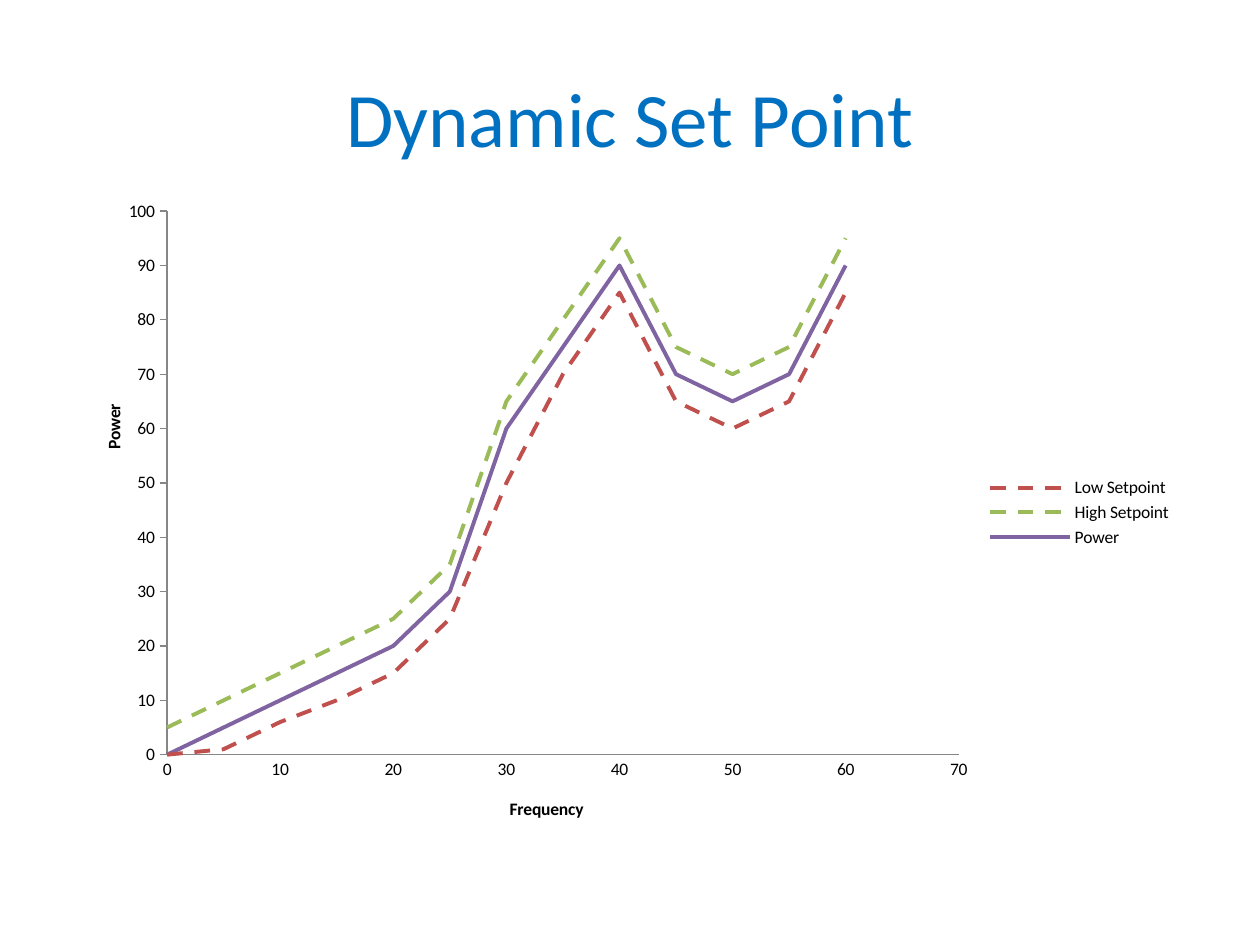
from lxml.etree import SubElement
from pptx import Presentation
from pptx.chart.data import XyChartData
from pptx.dml.color import RGBColor
from pptx.enum.chart import XL_CHART_TYPE, XL_LEGEND_POSITION, XL_TICK_MARK
from pptx.enum.dml import MSO_LINE
from pptx.enum.text import MSO_ANCHOR, PP_ALIGN
from pptx.oxml.ns import qn
from pptx.util import Pt

SCALE = 914400 // 126
FONT = "Calibri"
FREQS = range(0, 61, 5)
SERIES = [
    ("Low Setpoint", "C0504D", MSO_LINE.DASH,
     [0, 1, 6, 10, 15, 25, 50, 70, 85, 65, 60, 65, 85]),
    ("High Setpoint", "9BBB59", MSO_LINE.DASH,
     [5, 10, 15, 20, 25, 35, 65, 80, 95, 75, 70, 75, 95]),
    ("Power", "8064A2", MSO_LINE.SOLID,
     [0, 5, 10, 15, 20, 30, 60, 75, 90, 70, 65, 70, 90]),
]


def px(*nums):
    return [num * SCALE for num in nums]


def paint(part, tone):
    part.rgb = RGBColor.from_string(tone)


def style(font, size, tone, bold=False):
    font.name, font.size, font.bold = FONT, Pt(size), bold
    paint(font.color, tone)


def pin(node, **parts):
    """Fix the layout of a chart part, in fractions of the chart."""
    layout = node.find(qn("c:layout"))
    if layout is None:
        layout = node.makeelement(qn("c:layout"))
        prior = node.find(qn("c:tx"))
        node.insert(0 if prior is None else node.index(prior) + 1, layout)
    for child in list(layout):
        layout.remove(child)
    manual = SubElement(layout, qn("c:manualLayout"))
    for tag, val in parts.items():
        SubElement(manual, qn("c:" + tag)).set("val", str(val))


def add_title(slide, box, text):
    frame = slide.shapes.add_textbox(*px(*box)).text_frame
    frame.word_wrap = True
    frame.vertical_anchor = MSO_ANCHOR.MIDDLE
    para = frame.paragraphs[0]
    para.text = text
    para.alignment = PP_ALIGN.CENTER
    style(para.font, 44, "0070C0")


def set_axis(axis, name, top, tick, spot):
    axis.minimum_scale, axis.maximum_scale, axis.major_unit = 0, top, 10
    axis.has_major_gridlines = False
    axis.major_tick_mark = tick
    axis.minor_tick_mark = XL_TICK_MARK.NONE
    paint(axis.format.line.color, "868686")
    axis.format.line.width = Pt(0.75)
    title = axis.axis_title
    para = title.text_frame.paragraphs[0]
    para.text = name
    style(para.font, 10, "000000", True)
    left, upper = spot
    pin(title._element, xMode="edge", yMode="edge", x=left, y=upper)


def add_plot(slide, box):
    data = XyChartData(number_format="General")
    for name, _, _, powers in SERIES:
        line = data.add_series(name)
        for freq, power in zip(FREQS, powers):
            line.add_data_point(freq, power)
    chart = slide.shapes.add_chart(
        XL_CHART_TYPE.XY_SCATTER_SMOOTH_NO_MARKERS, *px(*box), data).chart
    chart.has_title = False
    style(chart.font, 10, "000000")
    chart.has_legend = True
    chart.legend.position = XL_LEGEND_POSITION.RIGHT
    chart.legend.include_in_layout = False
    plot = chart.plots[0]
    plot.vary_by_categories = False
    for line, (_, tone, dash, _) in zip(plot.series, SERIES):
        line.smooth = True
        pen = line.format.line
        paint(pen.color, tone)
        pen.width = Pt(2.25)
        pen.dash_style = dash
    set_axis(chart.category_axis, "Frequency", 70, XL_TICK_MARK.NONE, (0.4, 0.93))
    set_axis(chart.value_axis, "Power", 100, XL_TICK_MARK.OUTSIDE, (0.04, 0.33))
    pin(chart._chartSpace.chart.plotArea, layoutTarget="inner",
        xMode="edge", yMode="edge", x=0.1, y=0.04, w=0.7, h=0.83)


def main():
    deck = Presentation()
    deck.slide_width, deck.slide_height = px(1260, 945)
    slide = deck.slides.add_slide(deck.slide_layouts[6])
    add_title(slide, (63, 38, 1134, 157), "Dynamic Set Point")
    add_plot(slide, (54, 185, 1131, 655))
    deck.save("out.pptx")


if __name__ == "__main__":
    main()
